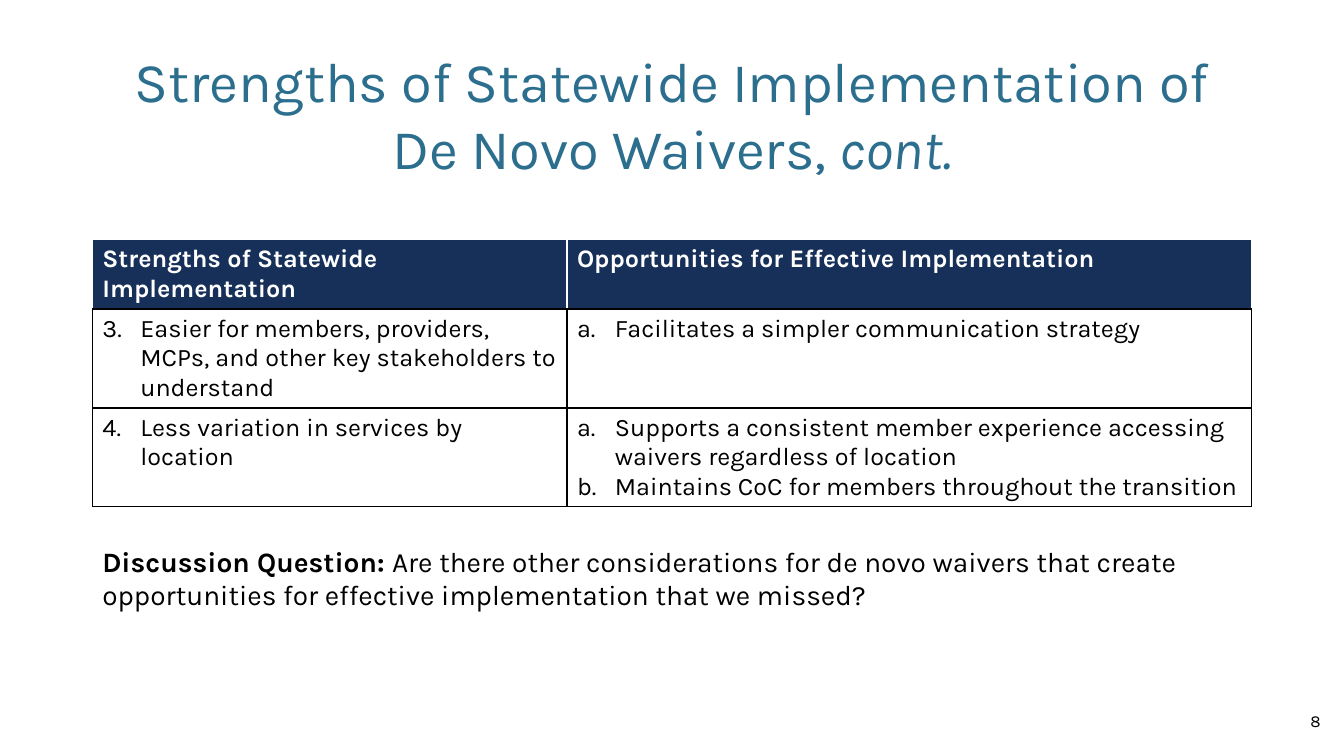
from dataclasses import dataclass

from lxml.etree import SubElement
from pptx import Presentation
from pptx.dml.color import RGBColor
from pptx.enum.shapes import MSO_SHAPE
from pptx.enum.text import MSO_ANCHOR, MSO_AUTO_SIZE, PP_ALIGN
from pptx.oxml import parse_xml
from pptx.oxml.ns import nsdecls, qn
from pptx.util import Pt


@dataclass(frozen=True)
class Theme:
    font: str = "Karla"
    heading: str = "2C6E8D"
    navy: str = "173059"
    white: str = "FFFFFF"
    black: str = "000000"
    title_size: int = 40
    question_size: int = 20
    table_size: int = 18
    number_size: int = 12
    border: int = 1
    list_indent: int = 27


class SlideBuilder:
    def __init__(self, slide, theme):
        self.slide = slide
        self.theme = theme

    def add_text(self, paragraph, text, size, color, bold=False, italic=False):
        run = paragraph.add_run()
        run.text = text
        run.font.name = self.theme.font
        run.font.size = Pt(size)
        run.font.color.rgb = RGBColor.from_string(color)
        run.font.bold = bold
        run.font.italic = italic

    def title(self, box, text, italic_ending):
        heading = self.slide.shapes.title
        heading.left, heading.top, heading.width, heading.height = map(Pt, box)
        frame = heading.text_frame
        frame.auto_size = MSO_AUTO_SIZE.NONE
        frame.vertical_anchor = MSO_ANCHOR.MIDDLE
        paragraph = frame.paragraphs[0]
        paragraph.alignment = PP_ALIGN.CENTER
        style = self.theme.title_size, self.theme.heading
        self.add_text(paragraph, text, *style)
        self.add_text(paragraph, italic_ending, *style, italic=True)

    def page_number(self, box, number):
        frame = self.slide.shapes.add_textbox(*map(Pt, box)).text_frame
        frame.word_wrap = True
        frame.vertical_anchor = MSO_ANCHOR.MIDDLE
        paragraph = frame.paragraphs[0]
        paragraph.alignment = PP_ALIGN.RIGHT
        self.add_text(paragraph, number, self.theme.number_size, self.theme.black)

    def question(self, box, label, text):
        panel = self.slide.shapes.add_shape(MSO_SHAPE.RECTANGLE, *map(Pt, box))
        panel.shadow.inherit = False
        panel.fill.solid()
        panel.fill.fore_color.rgb = RGBColor.from_string(self.theme.white)
        panel.line.fill.background()
        frame = panel.text_frame
        frame.word_wrap = True
        frame.auto_size = MSO_AUTO_SIZE.SHAPE_TO_FIT_TEXT
        frame.vertical_anchor = MSO_ANCHOR.TOP
        paragraph = frame.paragraphs[0]
        paragraph.alignment = PP_ALIGN.LEFT
        style = self.theme.question_size, self.theme.black
        self.add_text(paragraph, label, *style, bold=True)
        self.add_text(paragraph, text, *style)

    def table(self, box, widths, heights, headers, rows):
        """Each row is a tuple of (numbering scheme, first number, items) cells."""
        theme = self.theme
        grid = self.slide.shapes.add_table(
            len(rows) + 1, len(headers), *map(Pt, box)).table
        for column, width in zip(grid.columns, widths):
            column.width = Pt(width)
        for row, height in zip(grid.rows, heights):
            row.height = Pt(height)
        for column, header in enumerate(headers):
            cell = grid.cell(0, column)
            self.paint_cell(cell, theme.navy, theme.white)
            self.add_text(cell.text_frame.paragraphs[0], header,
                          theme.table_size, theme.white, bold=True)
        for row, entries in enumerate(rows, 1):
            for column, entry in enumerate(entries):
                cell = grid.cell(row, column)
                self.paint_cell(cell, theme.white, theme.black)
                self.numbered_list(cell.text_frame, *entry)

    def paint_cell(self, cell, fill, edge):
        """Fill the cell and draw its borders; the bottom one is always black."""
        cell.fill.solid()
        cell.fill.fore_color.rgb = RGBColor.from_string(fill)
        properties = cell._tc.get_or_add_tcPr()
        edges = {"lnL": edge, "lnR": edge, "lnT": edge, "lnB": self.theme.black}
        for position, (side, color) in enumerate(edges.items()):
            properties.insert(position, parse_xml(
                f'<a:{side} {nsdecls("a")} w="{Pt(self.theme.border)}">'
                f'<a:solidFill><a:srgbClr val="{color}"/></a:solidFill></a:{side}>'))

    def numbered_list(self, frame, scheme, start, items):
        indent = Pt(self.theme.list_indent)
        for index, item in enumerate(items):
            paragraph = frame.add_paragraph() if index else frame.paragraphs[0]
            properties = paragraph._p.get_or_add_pPr()
            properties.set("marL", str(indent))
            properties.set("indent", str(-indent))
            numbering = SubElement(properties, qn("a:buAutoNum"), type=scheme)
            if start > 1:
                numbering.set("startAt", str(start))
            self.add_text(paragraph, item, self.theme.table_size, self.theme.black)


def main():
    deck = Presentation()
    deck.slide_width, deck.slide_height = Pt(960), Pt(540)
    builder = SlideBuilder(deck.slides.add_slide(deck.slide_layouts[5]), Theme())
    left, width = 66, 828
    number, letter = "arabicPeriod", "alphaLcPeriod"

    builder.title((left, 29, width, 104.5),
                  "Strengths of Statewide Implementation of De Novo Waivers, ", "cont.")
    builder.table(
        (left, 171.2, width, 190),
        widths=(339, 489),
        heights=(48.6, 70.7, 70.7),
        headers=("Strengths of Statewide Implementation",
                 "Opportunities for Effective Implementation"),
        rows=(
            ((number, 3, ["Easier for members, providers, MCPs, and other "
                          "key stakeholders to understand"]),
             (letter, 1, ["Facilitates a simpler communication strategy"])),
            ((number, 4, ["Less variation in services by location"]),
             (letter, 1, ["Supports a consistent member experience accessing "
                          "waivers regardless of location",
                          "Maintains CoC for members throughout the transition"])),
        ))
    builder.question((left, 385.2, width, 55.5), "Discussion Question: ",
                     "Are there other considerations for de novo waivers that create "
                     "opportunities for effective implementation that we missed?")
    builder.page_number((734.4, 500.4, 216, 28.8), "8")
    deck.save("out.pptx")


if __name__ == "__main__":
    main()
